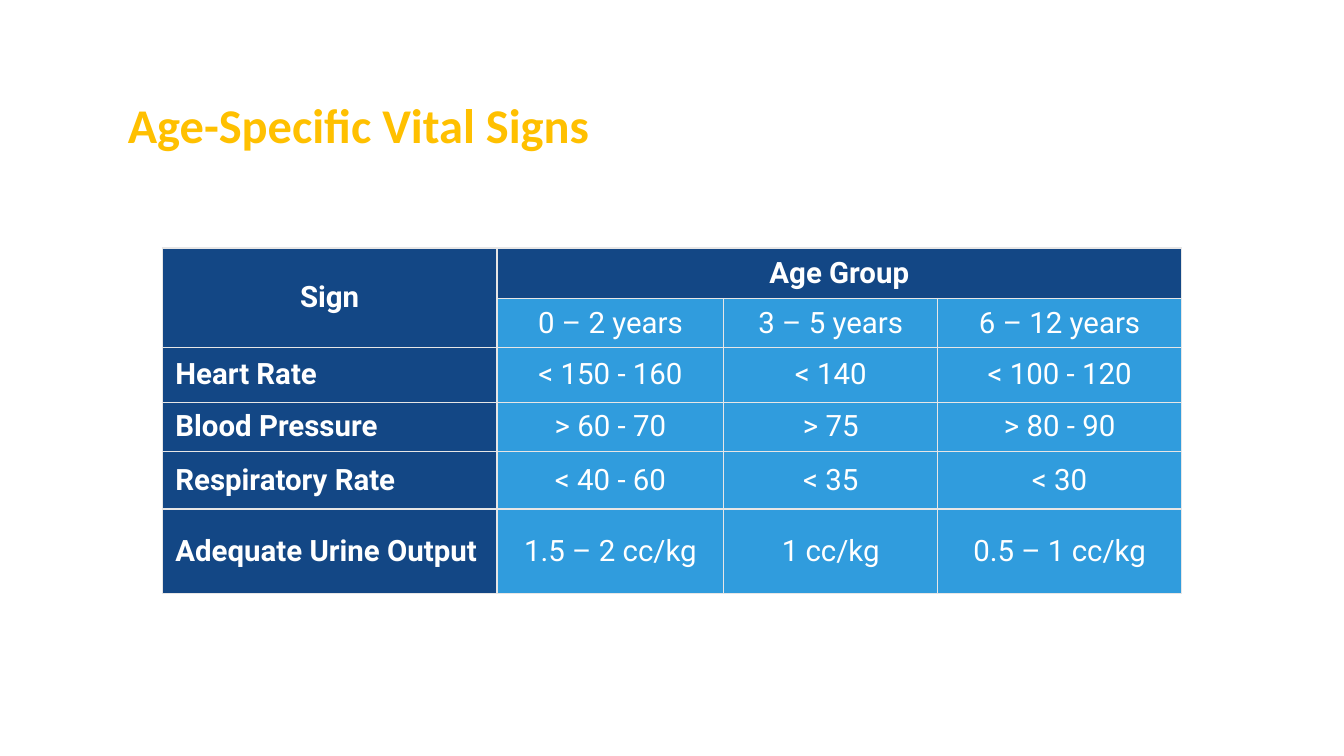
import pptx
import pptx.util
import pptx.oxml
import pptx.oxml.ns
import pptx.dml.color
import pptx.enum.text
from lxml import etree

Inches, Pt = pptx.util.Inches, pptx.util.Pt
RGBColor = pptx.dml.color.RGBColor
qn = pptx.oxml.ns.qn
ANCHOR, ALIGN = pptx.enum.text.MSO_ANCHOR, pptx.enum.text.PP_ALIGN

GOLD = RGBColor(0xFF, 0xC0, 0x00)
WHITE = RGBColor(0xFF, 0xFF, 0xFF)
NAVY = RGBColor(0x13, 0x47, 0x85)
SKY = RGBColor(0x30, 0x9C, 0xDD)
RULE = RGBColor(0xE7, 0xE6, 0xE6)


def style_font(run, color, **formats):
    run.font.color.rgb = color
    for attribute, value in formats.items():
        setattr(run.font, attribute, value)


def add_borders(cell):
    properties = cell._tc.get_or_add_tcPr()
    for side in ("a:lnL", "a:lnR", "a:lnT", "a:lnB"):
        line = etree.SubElement(properties, qn(side), w=str(Pt(1)))
        fill = etree.SubElement(line, qn("a:solidFill"))
        etree.SubElement(fill, qn("a:srgbClr"), val=str(RULE))


deck = pptx.Presentation()
deck.slide_width, deck.slide_height = Inches(13.33), Inches(7.5)
slide = deck.slides.add_slide(deck.slide_layouts[6])

# Heading
heading = slide.shapes.add_textbox(
    Inches(1.17), Inches(0.95), Inches(10.98), Inches(0.63)).text_frame
heading.word_wrap = True
heading.vertical_anchor = ANCHOR.BOTTOM
heading_line = heading.paragraphs[0]
heading_line.line_spacing = 0.9
heading_line.space_before = Pt(10)
heading_run = heading_line.add_run()
heading_run.text = "Age-Specific Vital Signs"
style_font(heading_run, GOLD, name="Calibri", size=Pt(34.6), bold=True)

# Vital signs by age group
vital_signs = [
    ["Sign", "Age Group", "", ""],
    ["", "0 – 2 years", "3 – 5 years", "6 – 12 years"],
    ["Heart Rate", "< 150 - 160", "< 140", "< 100 - 120"],
    ["Blood Pressure", "> 60 - 70", "> 75", "> 80 - 90"],
    ["Respiratory Rate", "< 40 - 60", "< 35", "< 30"],
    ["Adequate Urine Output", "1.5 – 2 cc/kg", "1 cc/kg", "0.5 – 1 cc/kg"],
]
column_widths = [3.32, 2.25, 2.12, 2.42]
row_heights = [0.5, 0.49, 0.54, 0.49, 0.57, 0.84]
signs_table = slide.shapes.add_table(
    len(row_heights), len(column_widths), Inches(1.61), Inches(2.46),
    Inches(sum(column_widths)), Inches(sum(row_heights))).table
for column, width in zip(signs_table.columns, column_widths):
    column.width = Inches(width)
for row, height in zip(signs_table.rows, row_heights):
    row.height = Inches(height)

# Headers that span cells
signs_table.cell(0, 0).merge(signs_table.cell(1, 0))
signs_table.cell(0, 1).merge(signs_table.cell(0, 3))

cell_format = {
    "vertical_anchor": ANCHOR.MIDDLE,
    "margin_left": Inches(0.13), "margin_right": Inches(0.13),
    "margin_top": Inches(0.07), "margin_bottom": Inches(0.07),
}
for row_index, readings in enumerate(vital_signs):
    for column_index, reading in enumerate(readings):
        cell = signs_table.cell(row_index, column_index)
        is_header = row_index == 0 or column_index == 0
        for attribute, value in cell_format.items():
            setattr(cell, attribute, value)
        add_borders(cell)
        cell.fill.solid()
        cell.fill.fore_color.rgb = NAVY if is_header else SKY
        if not reading:
            continue
        line = cell.text_frame.paragraphs[0]
        is_sign_name = column_index == 0 and row_index > 1
        line.alignment = ALIGN.LEFT if is_sign_name else ALIGN.CENTER
        # Space before, as a share of the line
        spacing = etree.SubElement(line._p.get_or_add_pPr(), qn("a:spcBef"))
        etree.SubElement(spacing, qn("a:spcPct"), val="20000")
        run = line.add_run()
        run.text = reading
        style_font(run, WHITE, name="Roboto", size=Pt(21), bold=is_header)

deck.save("out.pptx")
